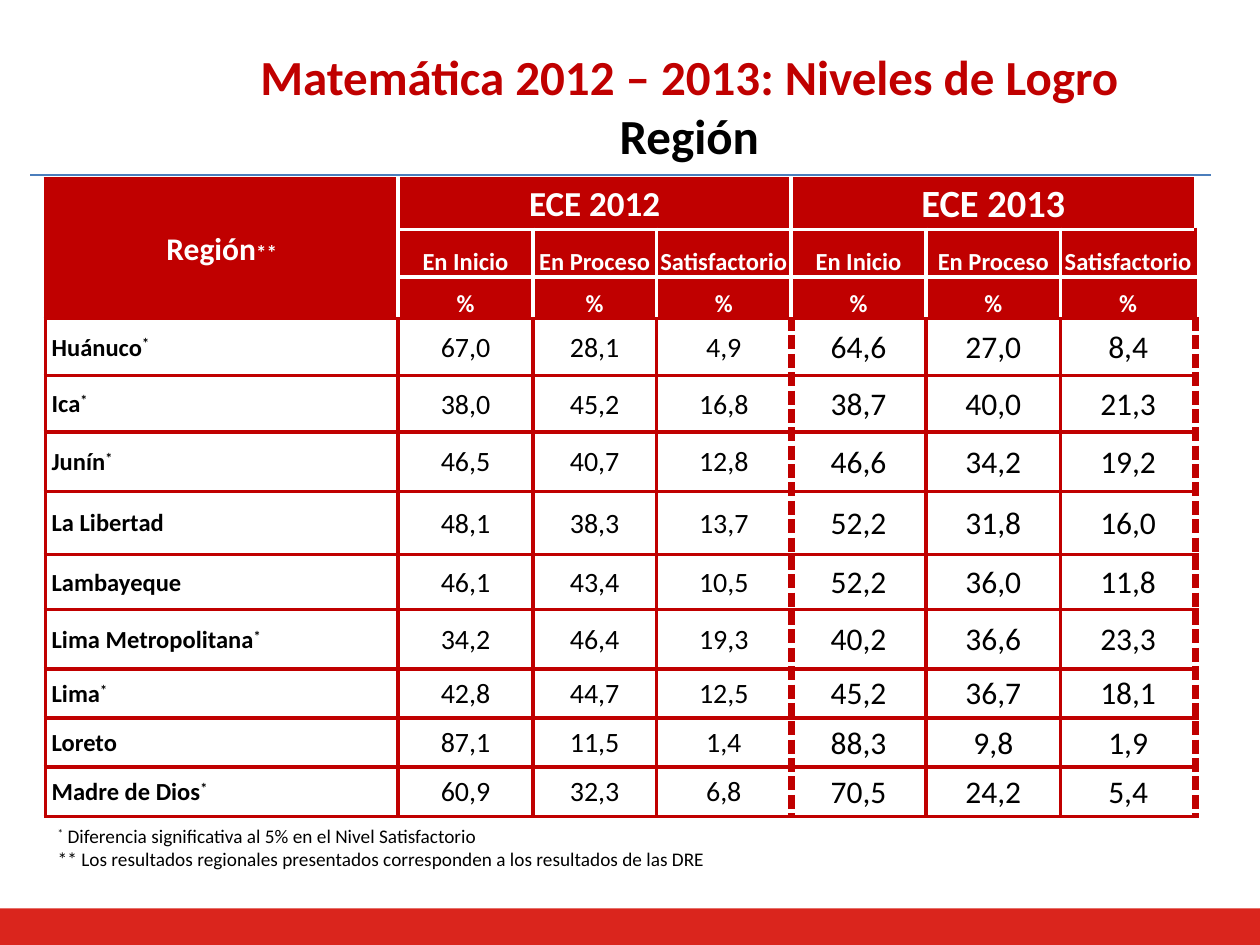
import pptx
import pptx.dml.color
import pptx.enum.shapes
import pptx.enum.text
import pptx.oxml.ns
import pptx.util
from lxml import etree
from pptx.util import Inches

RED = "C00000"
WHITE = "FFFFFF"
BLACK = "000000"
CENTER = pptx.enum.text.PP_ALIGN.CENTER
MIDDLE = pptx.enum.text.MSO_ANCHOR.MIDDLE
BOTTOM = pptx.enum.text.MSO_ANCHOR.BOTTOM
RECTANGLE = pptx.enum.shapes.MSO_SHAPE.RECTANGLE
qn = pptx.oxml.ns.qn


def rgb(color):
    return pptx.dml.color.RGBColor.from_string(color)


def add_run(paragraph, text, size, color, bold=False, superscript=False):
    run = paragraph.add_run()
    run.text = text
    run.font.name = "Calibri"
    run.font.size = pptx.util.Pt(size)
    run.font.bold = bold
    run.font.color.rgb = rgb(color)
    if superscript:
        run.font._element.set("baseline", "30000")


presentation = pptx.Presentation()
presentation.slide_width = Inches(10)
presentation.slide_height = Inches(7.5)
slide = presentation.slides.add_slide(presentation.slide_layouts[5])

footer_band = slide.shapes.add_shape(RECTANGLE, 0, Inches(7.21), Inches(10), Inches(0.29))
table_frame = slide.shapes.add_table(12, 7, Inches(0.36), Inches(1.42), Inches(9.14), Inches(5.06))
title_panel = slide.shapes.add_shape(RECTANGLE, Inches(0.01), 0, Inches(9.69), Inches(1.39))
for shape, color in ((footer_band, "DA251D"), (title_panel, WHITE)):
    shape.shadow.inherit = False
    shape.fill.solid()
    shape.fill.fore_color.rgb = rgb(color)
    shape.line.fill.background()

title = slide.shapes.title
title_panel._element.addnext(title._element)
title.left, title.top = Inches(0.98), Inches(0.21)
title.width, title.height = Inches(8.98), Inches(1.25)
title.text_frame.vertical_anchor = MIDDLE
title.text_frame.auto_size = pptx.enum.text.MSO_AUTO_SIZE.NONE
title.text_frame.text = "Matemática 2012 – 2013: Niveles de Logro\nRegión"
for paragraph, color in zip(title.text_frame.paragraphs, (RED, BLACK)):
    paragraph.alignment = CENTER
    font = paragraph.runs[0].font
    font.name = "Calibri"
    font.size = pptx.util.Pt(28)
    font.bold = True
    font.color.rgb = rgb(color)

levels = ["En Inicio", "En Proceso", "Satisfactorio"]
rows = [
    ["Región**", "ECE 2012", "", "", "ECE 2013", "", ""],
    [""] + levels * 2,
    [""] + ["%"] * 6,
    ["Huánuco*", "67,0", "28,1", "4,9", "64,6", "27,0", "8,4"],
    ["Ica*", "38,0", "45,2", "16,8", "38,7", "40,0", "21,3"],
    ["Junín*", "46,5", "40,7", "12,8", "46,6", "34,2", "19,2"],
    ["La Libertad", "48,1", "38,3", "13,7", "52,2", "31,8", "16,0"],
    ["Lambayeque", "46,1", "43,4", "10,5", "52,2", "36,0", "11,8"],
    ["Lima Metropolitana*", "34,2", "46,4", "19,3", "40,2", "36,6", "23,3"],
    ["Lima*", "42,8", "44,7", "12,5", "45,2", "36,7", "18,1"],
    ["Loreto", "87,1", "11,5", "1,4", "88,3", "9,8", "1,9"],
    ["Madre de Dios*", "60,9", "32,3", "6,8", "70,5", "24,2", "5,4"],
]
column_widths = [2.8, 1.07, 0.98, 1.07, 1.07, 1.07, 1.07]
row_heights = [0.4, 0.38, 0.33, 0.45, 0.45, 0.47, 0.5, 0.44, 0.47, 0.39, 0.39, 0.39]
header_rows = 3

table = table_frame.table
table.first_row = False
table.horz_banding = False
for column, width in zip(table.columns, column_widths):
    column.width = Inches(width)
for row, height in zip(table.rows, row_heights):
    row.height = Inches(height)
table.cell(0, 0).merge(table.cell(2, 0))
table.cell(0, 1).merge(table.cell(0, 3))
table.cell(0, 4).merge(table.cell(0, 6))

for row_index, row_texts in enumerate(rows):
    body = row_index >= header_rows
    for column_index, text in enumerate(row_texts):
        cell = table.cell(row_index, column_index)
        first = column_index == 0
        cell.margin_left = Inches(0.05 if body and first else 0.01)
        cell.margin_top = cell.margin_right = Inches(0.01)
        cell.margin_bottom = 0
        cell.vertical_anchor = BOTTOM if row_index in (1, 2) and not first else MIDDLE

        red_sides = {
            "lnL": body or first,
            "lnR": body or column_index == 6,
            "lnT": body or first or row_index == 0,
            "lnB": body or first or row_index == 2,
        }
        dashed_sides = {3: "lnR", 4: "lnL", 6: "lnR"}
        for side, red in red_sides.items():
            dashed = body and dashed_sides.get(column_index) == side
            border = etree.SubElement(cell._tc.get_or_add_tcPr(), qn("a:" + side))
            border.set("w", str(pptx.util.Pt(4.5 if dashed else 2.25)))
            border_fill = etree.SubElement(border, qn("a:solidFill"))
            etree.SubElement(border_fill, qn("a:srgbClr")).set("val", RED if red else WHITE)
            etree.SubElement(border, qn("a:prstDash")).set("val", "sysDash" if dashed else "solid")

        if body:
            cell.fill.background()
        else:
            cell.fill.solid()
            cell.fill.fore_color.rgb = rgb(RED)

        if not text:
            continue
        paragraph = cell.text_frame.paragraphs[0]
        if not (body and first):
            paragraph.alignment = CENTER
        if first:
            name = text.rstrip("*")
            marks = text[len(name):]
            color = BLACK if body else WHITE
            add_run(paragraph, name, 14 if body else 18, color, bold=True)
            if marks:
                add_run(paragraph, marks, 14 if body else 12, color, bold=True, superscript=body)
        elif body:
            add_run(paragraph, text, 16 if column_index < 4 else 18, BLACK)
        else:
            size = 14 if row_index else {1: 20, 4: 22}[column_index]
            add_run(paragraph, text, size, WHITE, bold=True)

title_rule = slide.shapes.add_connector(
    pptx.enum.shapes.MSO_CONNECTOR.STRAIGHT, Inches(0.24), Inches(1.39), Inches(9.61), Inches(1.39)
)
title_rule.line.color.rgb = rgb("4B7EBC")
title_rule.line.width = pptx.util.Pt(0.75)
etree.SubElement(title_rule._element.spPr, qn("a:effectLst"))

footnotes = slide.shapes.add_textbox(Inches(0.36), Inches(6.49), Inches(9.45), Inches(0.47))
footnotes.text_frame.word_wrap = True
significance_note = footnotes.text_frame.paragraphs[0]
source_note = footnotes.text_frame.add_paragraph()
for paragraph in (significance_note, source_note):
    properties = paragraph._p.get_or_add_pPr()
    properties.set("marL", str(Inches(0.1)))
    properties.set("indent", str(Inches(-0.1)))
add_run(significance_note, "*", 11, BLACK, superscript=True)
add_run(significance_note, " Diferencia significativa al 5% en el Nivel Satisfactorio", 11, BLACK)
add_run(
    source_note,
    "** Los resultados regionales presentados corresponden a los resultados de las DRE",
    11,
    BLACK,
)

presentation.save("out.pptx")
